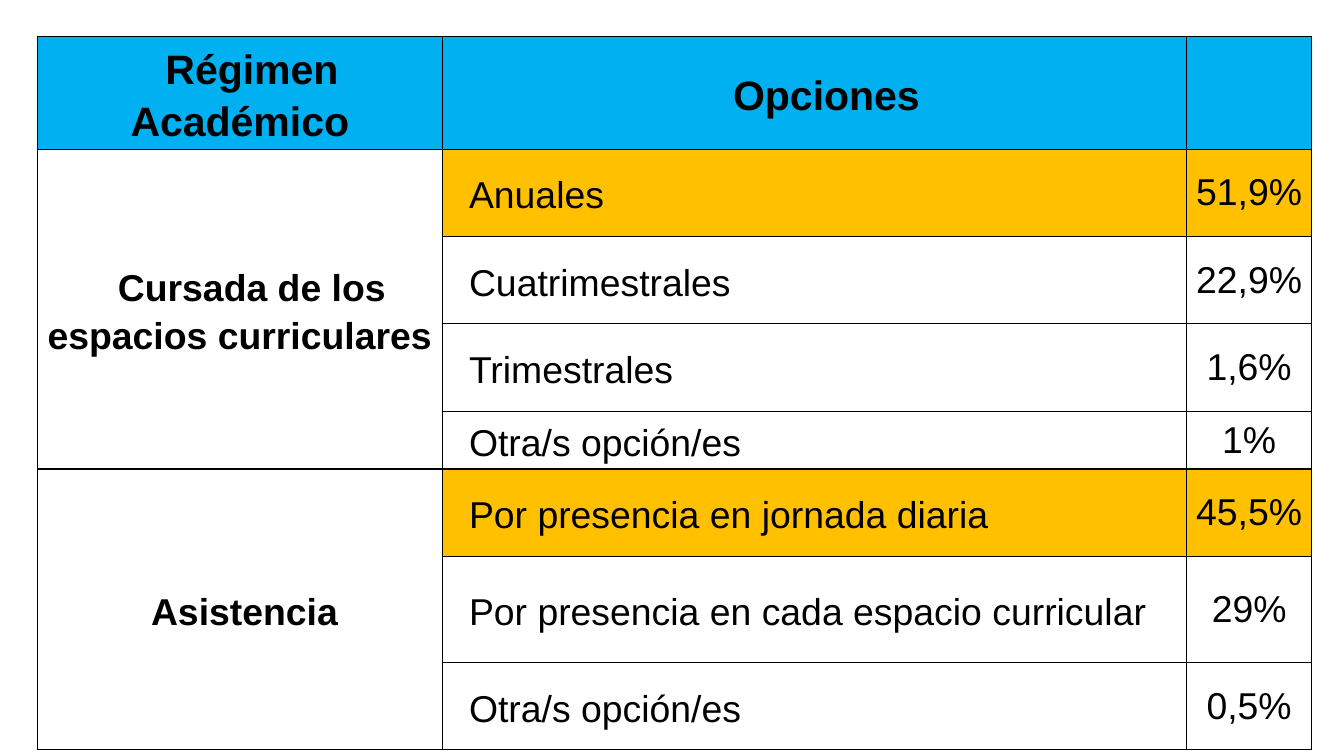
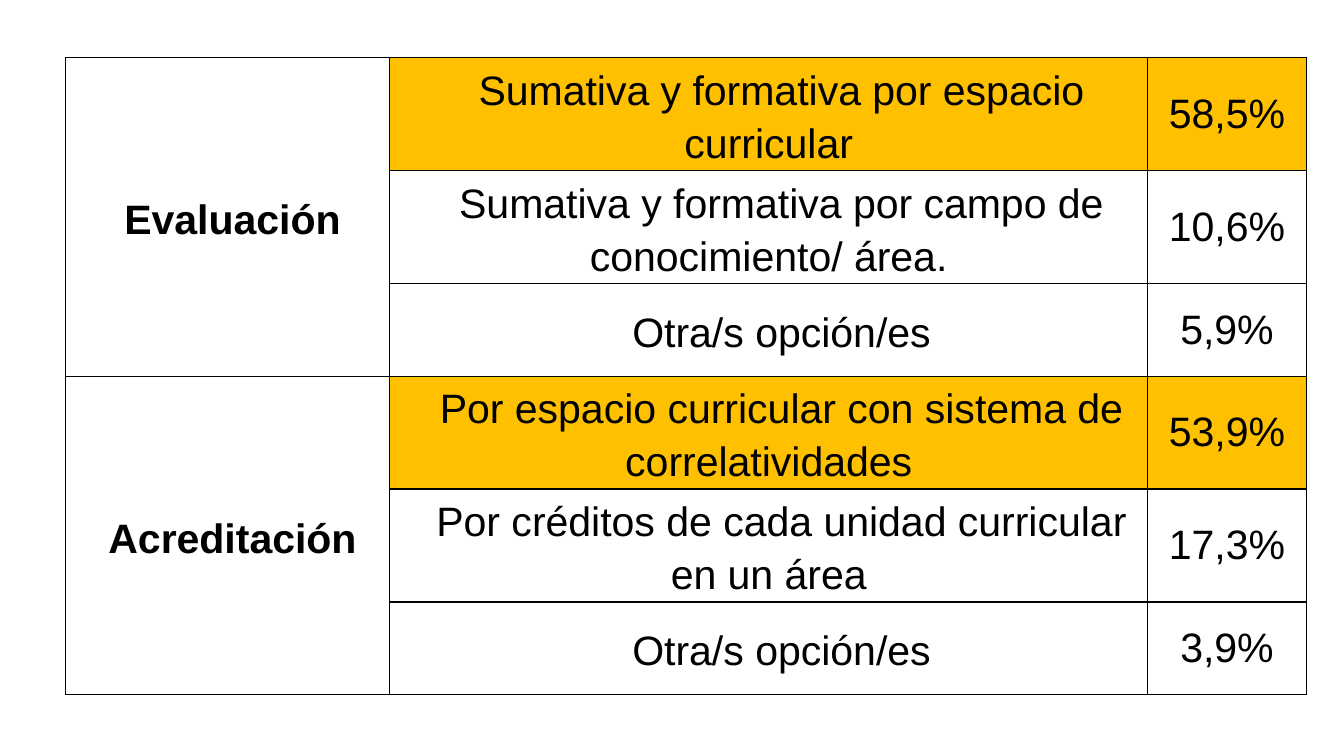
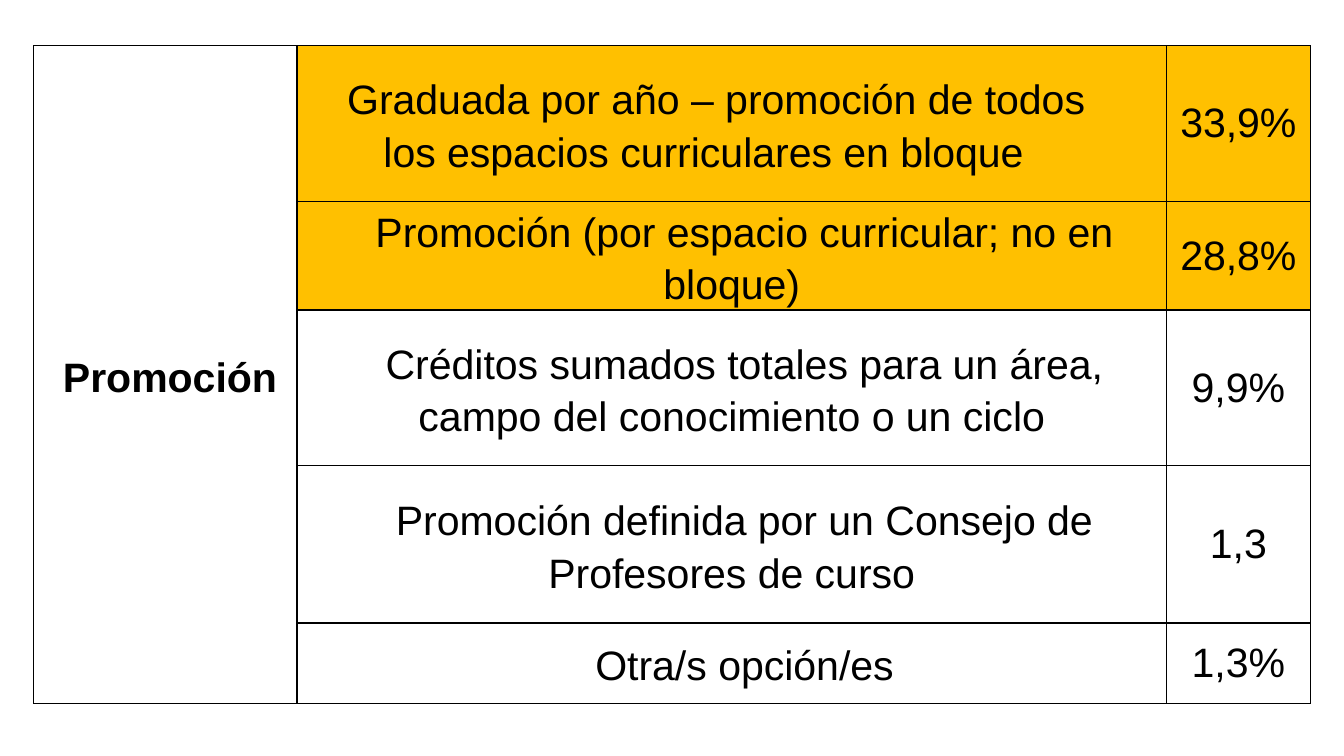
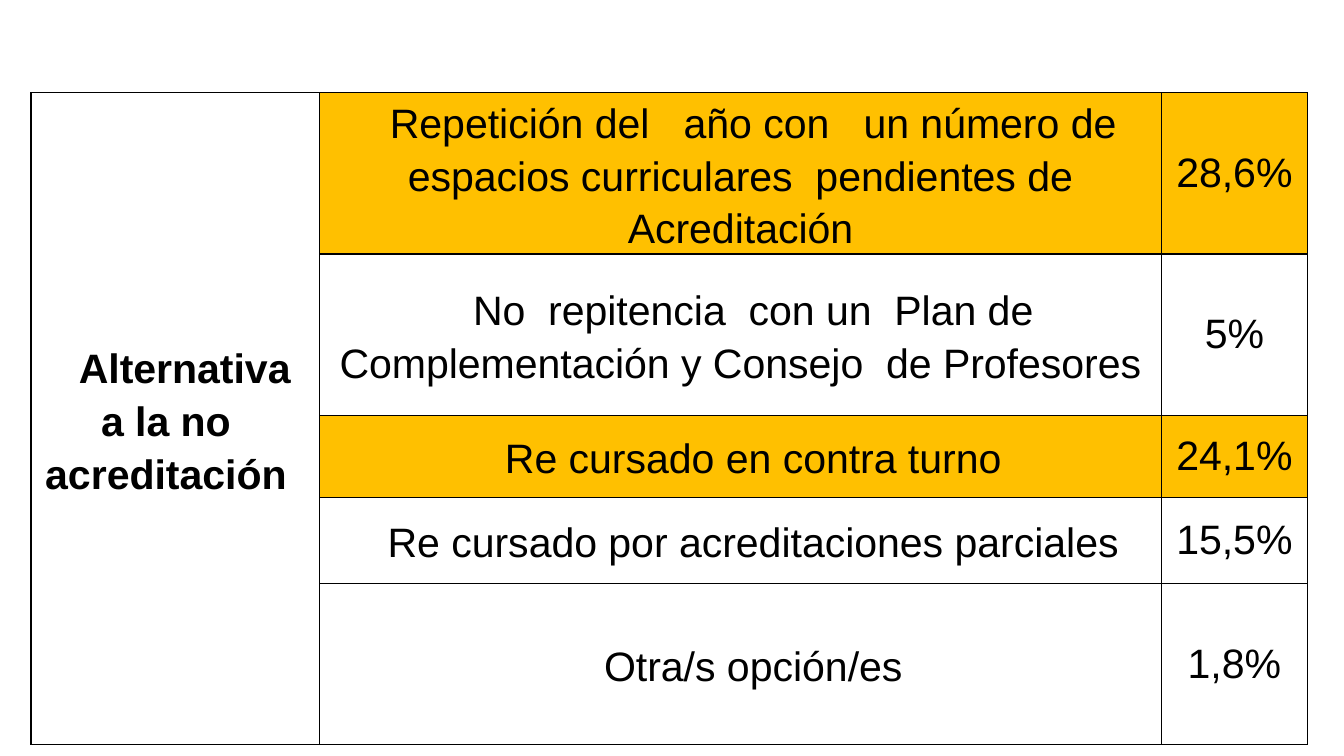
import pptx
import pptx.util
import pptx.oxml
import pptx.oxml.ns
import pptx.dml.color
import pptx.enum.text

Inches = pptx.util.Inches
Pt = pptx.util.Pt
Align = pptx.enum.text.PP_ALIGN

# Shared look
BLACK = pptx.dml.color.RGBColor(0x00, 0x00, 0x00)
BLUE = pptx.dml.color.RGBColor(0x00, 0xB0, 0xF0)
AMBER = pptx.dml.color.RGBColor(0xFF, 0xC0, 0x00)
FONT = "Arial"
RULE = Pt(0.75)
OTHER = "Otra/s opción/es"

# Cell styles: margins are left, right, top, bottom
TIGHT = (0.01, 0.01, 0.01, 0.01)
WIDE = (0.06, 0.06, 0, 0)
GROUP = dict(margins=TIGHT, bold=True, left=0.07)
LEAD = dict(margins=TIGHT, bold=True, indent=0.18)
HEAD = dict(LEAD, fill=BLUE)
CHOICE = dict(margins=TIGHT, indent=0.19)
SHARE = dict(margins=WIDE, spacing=None)


def draw_edges(cell):
    """Rule all four sides of a cell."""
    props = cell._tc.get_or_add_tcPr()
    for side in "LRTB":
        props.append(pptx.oxml.parse_xml(
            f'<a:ln{side} {pptx.oxml.ns.nsdecls("a")} w="{RULE}">'
            f'<a:solidFill><a:srgbClr val="{BLACK}"/></a:solidFill>'
            f'</a:ln{side}>'))


def paint(cell, fill=None):
    if fill is None:
        cell.fill.background()
    else:
        cell.fill.solid()
        cell.fill.fore_color.rgb = fill


def write(cell, text, size, margins, align=Align.CENTER, bold=False,
          left=0, indent=0, spacing=1.15, fill=None):
    """Put formatted text in a cell."""
    names = ("margin_left", "margin_right", "margin_top", "margin_bottom")
    for name, gap in zip(names, margins):
        setattr(cell, name, Inches(gap))
    cell.vertical_anchor = pptx.enum.text.MSO_ANCHOR.MIDDLE
    paint(cell, fill)
    para = cell.text_frame.paragraphs[0]
    for name, value in dict(alignment=align, line_spacing=spacing).items():
        setattr(para, name, value)
    props = para._p.get_or_add_pPr()
    props.set("marL", str(Inches(left)))
    props.set("indent", str(Inches(indent)))
    run = para.add_run()
    run.text = text
    for name, value in dict(name=FONT, size=Pt(size), bold=bold).items():
        setattr(run.font, name, value)
    run.font.color.rgb = BLACK


def add_grid(deck, place, cols, rows):
    """Add a slide with a plain ruled table."""
    slide = deck.slides.add_slide(deck.slide_layouts[6])
    box = [Inches(n) for n in (*place, sum(cols), sum(rows))]
    grid = slide.shapes.add_table(len(rows), len(cols), *box).table
    grid.first_row = grid.horz_banding = False
    for col, width in zip(grid.columns, cols):
        col.width = Inches(width)
    for row, height in zip(grid.rows, rows):
        row.height = Inches(height)
    for cell in grid.iter_cells():
        draw_edges(cell)
        paint(cell)
    return grid


def add_group(grid, top, title, items, size=22, group=GROUP, choice=CHOICE):
    """Fill one merged heading and its options; starred ones stand out."""
    first = grid.cell(top, 0)
    first.merge(grid.cell(top + len(items) - 1, 0))
    write(first, title, size, **group)
    for row, (text, share, *extra) in enumerate(items, top):
        style = dict(fill=AMBER if share.endswith("*") else None)
        look = {**choice, **style, **(extra[0] if extra else {})}
        write(grid.cell(row, 1), text, size, **look)
        write(grid.cell(row, 2), share.rstrip("*"), size, **SHARE, **style)


def add_regime(deck):
    grid = add_grid(deck, (0.28, 0.27), (3.01, 5.54, 0.93),
                    (0.84, 0.65, 0.65, 0.65, 0.43, 0.65, 0.79, 0.65))
    write(grid.cell(0, 0), "Régimen Académico", 22, **HEAD)
    write(grid.cell(0, 1), "Opciones", 22, **{**HEAD, "margins": WIDE})
    paint(grid.cell(0, 2), BLUE)
    choice = dict(CHOICE, align=Align.LEFT)
    add_group(grid, 1, "Cursada de los espacios curriculares", [
        ("Anuales", "51,9%*"),
        ("Cuatrimestrales", "22,9%"),
        ("Trimestrales", "1,6%"),
        (OTHER, "1%"),
    ], 20, LEAD, choice)
    add_group(grid, 5, "Asistencia", [
        ("Por presencia en jornada diaria", "45,5%*"),
        ("Por presencia en cada espacio curricular", "29%"),
        (OTHER, "0,5%"),
    ], 20, choice=choice)


def add_grading(deck):
    grid = add_grid(deck, (0.49, 0.43), (2.41, 5.64, 1.18),
                    (0.84, 0.84, 0.69) * 2)
    add_group(grid, 0, "Evaluación", [
        ("Sumativa y formativa por espacio curricular", "58,5%*"),
        ("Sumativa y formativa por campo de conocimiento/ área.", "10,6%"),
        (OTHER, "5,9%"),
    ])
    add_group(grid, 3, "Acreditación", [
        ("Por espacio curricular con sistema de correlatividades", "53,9%*"),
        ("Por créditos de cada unidad curricular en un área", "17,3%"),
        (OTHER, "3,9%"),
    ])


def add_passing(deck):
    grid = add_grid(deck, (0.25, 0.34), (1.96, 6.47, 1.07),
                    (1.16, 0.8, 1.16, 1.17, 0.6))
    inset = dict(margins=(0.01, 0.43, 0.01, 0.01))
    add_group(grid, 0, "Promoción", [
        ("Graduada por año – promoción de todos los espacios curriculares "
         "en bloque", "33,9%*", inset),
        ("Promoción (por espacio curricular; no en bloque)", "28,8%*"),
        ("Créditos sumados totales para un área, campo del conocimiento "
         "o un ciclo", "9,9%"),
        ("Promoción definida por un Consejo de Profesores de curso", "1,3"),
        (OTHER, "1,3%"),
    ])


def add_retake(deck):
    grid = add_grid(deck, (0.23, 0.69), (2.15, 6.26, 1.09),
                    (1.2, 1.2, 0.61, 0.64, 1.19))
    group = dict(LEAD, indent=0.28, margins=(0.01, 0.15, 0.01, 0.01))
    add_group(grid, 0, "Alternativa a la no acreditación", [
        ("Repetición del   año con   un número de espacios curriculares  "
         "pendientes de Acreditación", "28,6%*"),
        ("No  repitencia  con un  Plan de Complementación y Consejo  "
         "de Profesores", "5%"),
        ("Re cursado en contra turno", "24,1%*"),
        ("Re cursado por acreditaciones parciales", "15,5%"),
        (OTHER, "1,8%"),
    ], group=group)


def main():
    deck = pptx.Presentation()
    deck.slide_width = Inches(10)
    deck.slide_height = deck.slide_width * 9 // 16
    for build in (add_regime, add_grading, add_passing, add_retake):
        build(deck)
    deck.save("out.pptx")


if __name__ == "__main__":
    main()
